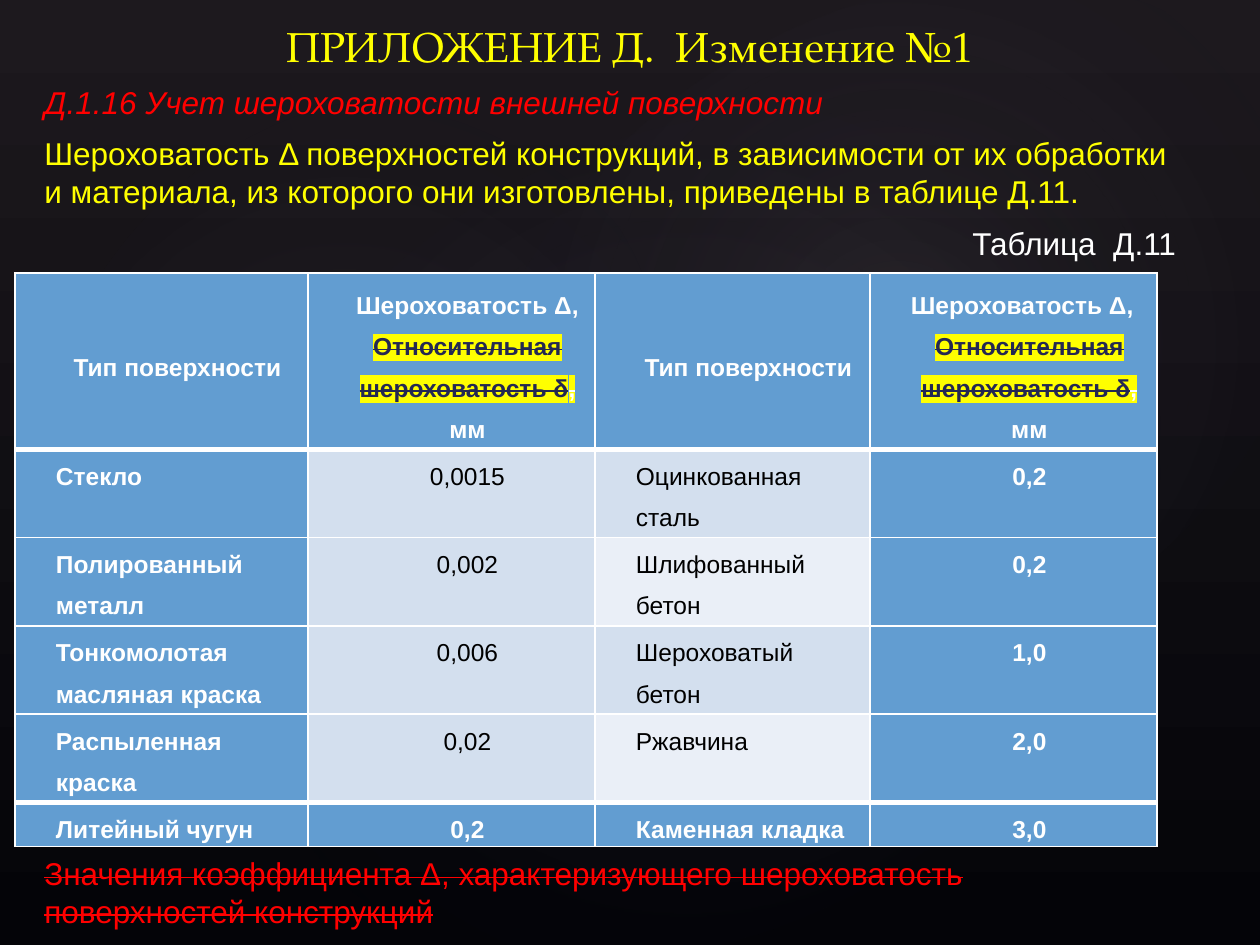
from dataclasses import dataclass
from lxml import etree
from pptx import Presentation, util as u
from pptx.dml.color import RGBColor
from pptx.enum import shapes, text
from pptx.oxml.ns import qn


@dataclass(frozen=True)
class Theme:
    sans: str = "Arial"
    serif: str = "TeX Gyre Pagella"
    white: str = "FFFFFF"
    black: str = "000000"
    yellow: str = "FFFF00"
    red: str = "FF0000"
    navy: str = "242852"
    blue: str = "629DD1"
    pale: str = "D3DFEE"
    light: str = "EAEFF7"
    glow: str = "C4BCC6"
    top: str = "1D191E"
    foot: str = "040408"
    big: int = 24
    body: int = 18
    small: int = 14


T = Theme()
MID = text.PP_ALIGN.CENTER
LEFT = text.PP_ALIGN.LEFT

GLOWS = [
    ((189, 144, 998, 786), 328.7, 7),
    ((-38, 161, 764, 617), 294.3, 8),
    ((451, 16, 893, 655), 328.7, 8),
]
NOTES = [
    ((960, 218, 239, 50), "Таблица  Д.11", dict(color=T.white, wrap=False)),
    ((63, 0, 1134, 77), "ПРИЛОЖЕНИЕ Д.  Изменение №1",
     dict(color=T.yellow, size=T.big, face=T.serif, align=MID,
          anchor=text.MSO_ANCHOR.BOTTOM)),
    ((32, 77, 868, 50), "Д.1.16 Учет шероховатости внешней поверхности",
     dict(color=T.red, italic=True)),
    ((32, 128, 1170, 89),
     "Шероховатость Δ поверхностей конструкций, в зависимости от их обработки "
     "и материала, из которого они изготовлены, приведены в таблице Д.11.",
     dict(color=T.yellow)),
    ((32, 848, 1134, 89),
     "Значения коэффициента Δ, характеризующего шероховатость "
     "поверхностей конструкций", dict(color=T.red, strike=True)),
]
KIND = "Тип поверхности"
ROUGH = "Шероховатость Δ,"
OLD = [
    ("Относительная шероховатость δ", dict(color=T.navy, strike=True, mark=T.yellow)),
    (",", dict(strike=True, mark=T.yellow)),
    (" мм", {}),
]
ROWS = [
    [KIND, ROUGH, KIND, ROUGH],
    ["Стекло", "0,0015", "Оцинкованная сталь", "0,2"],
    ["Полированный металл", "0,002", "Шлифованный бетон", "0,2"],
    ["Тонкомолотая масляная краска", "0,006", "Шероховатый бетон", "1,0"],
    ["Распыленная краска", "0,02", "Ржавчина", "2,0"],
    ["Литейный чугун", "0,2", "Каменная кладка", "3,0"],
]
COLS = [293, 287, 275, 287]
HIGHS = [174, 87, 87, 87, 87, 44]
THICK = {1, 5}


def px(n):
    return u.Emu(round(n * 914400 / 126))


def rgb(code):
    return RGBColor.from_string(code)


def write(para, words, color=T.white, size=T.body, face=T.sans, align=LEFT,
          bold=False, italic=False, strike=False, mark=None):
    para.alignment = align
    run = para.add_run()
    run.text = words
    font = run.font
    font.size, font.name = u.Pt(size), face
    font.bold, font.italic = bold, italic
    font.color.rgb = rgb(color)
    props = run._r.get_or_add_rPr()
    if strike:
        props.set("strike", "sngStrike")
    if mark:
        high = etree.Element(qn("a:highlight"))
        etree.SubElement(high, qn("a:srgbClr")).set("val", mark)
        props.find(qn("a:solidFill")).addnext(high)


def note(slide, box, words, wrap=True, anchor=text.MSO_ANCHOR.TOP, **form):
    frame = slide.shapes.add_textbox(*map(px, box)).text_frame
    frame.word_wrap = wrap
    frame.vertical_anchor = anchor
    write(frame.paragraphs[0], words, **form)


def glow(slide, box, turn, alpha):
    oval = slide.shapes.add_shape(shapes.MSO_SHAPE.OVAL, *map(px, box))
    oval.shadow.inherit = False
    oval.rotation = turn
    oval.line.fill.background()
    oval.fill.gradient()
    grad = oval._element.spPr.find(qn("a:gradFill"))
    for part in list(grad):
        grad.remove(part)
    stops = etree.SubElement(grad, qn("a:gsLst"))
    for pos, code, fade in [(0, T.glow, alpha), (58, T.navy, 0)]:
        stop = etree.SubElement(stops, qn("a:gs"), pos=str(pos * 1000))
        tint = etree.SubElement(stop, qn("a:srgbClr"), val=code)
        etree.SubElement(tint, qn("a:alpha"), val=str(fade * 1000))
    way = etree.SubElement(grad, qn("a:path"))
    way.set("path", "circle")
    etree.SubElement(way, qn("a:fillToRect"), {side: "50000" for side in "ltrb"})


def edge(cell, row):
    props = cell._tc.get_or_add_tcPr()
    wide = {"L": 1, "R": 1, "T": 3 if row in THICK else 1,
            "B": 3 if row + 1 in THICK else 1}
    for i, (side, size) in enumerate(wide.items()):
        line = etree.Element(qn("a:ln" + side), w=str(u.Pt(size)))
        fill = etree.SubElement(line, qn("a:solidFill"))
        etree.SubElement(fill, qn("a:srgbClr"), val=T.white)
        props.insert(i, line)


def shade(row, col):
    if row in (0, 5) or col in (0, 3):
        return T.blue
    return T.light if col == 2 and row % 2 == 0 else T.pale


def fill_cell(cell, row, col, words):
    tone = shade(row, col)
    cell.fill.solid()
    cell.fill.fore_color.rgb = rgb(tone)
    edge(cell, row)
    cell.margin_left = cell.margin_right = px(9)
    cell.margin_top = cell.margin_bottom = 0
    head = row == 0
    cell.vertical_anchor = text.MSO_ANCHOR.MIDDLE if head else text.MSO_ANCHOR.TOP
    form = dict(size=T.small, bold=tone == T.blue,
                color=T.white if tone == T.blue else T.black)
    frame = cell.text_frame
    mid = col != 3 if head else col % 2 == 1
    write(frame.paragraphs[0], words, align=MID if mid else LEFT, **form)
    if words == ROUGH:
        para = frame.add_paragraph()
        for part, extra in OLD:
            write(para, part, align=MID, **{**form, **extra})
    for para in frame.paragraphs:
        para.line_spacing = 1.5
        para._p.get_or_add_pPr().set("marL", str(px(32)))


def grid(slide):
    table = slide.shapes.add_table(len(ROWS), len(COLS), px(15), px(273),
                                   px(sum(COLS)), px(sum(HIGHS))).table
    table.first_row = table.horz_banding = False
    for col, wide in zip(table.columns, COLS):
        col.width = px(wide)
    for r, row in enumerate(ROWS):
        table.rows[r].height = px(HIGHS[r])
        for c, words in enumerate(row):
            fill_cell(table.cell(r, c), r, c, words)


def main():
    deck = Presentation()
    deck.slide_width, deck.slide_height = px(1260), px(945)
    slide = deck.slides.add_slide(deck.slide_layouts[6])
    back = slide.background.fill
    back.gradient()
    back.gradient_angle = 270
    for stop, code in zip(back.gradient_stops, (T.top, T.foot)):
        stop.color.rgb = rgb(code)
    for spot in GLOWS:
        glow(slide, *spot)
    for box, words, form in NOTES:
        note(slide, box, words, **form)
    grid(slide)
    deck.save("out.pptx")


if __name__ == "__main__":
    main()
